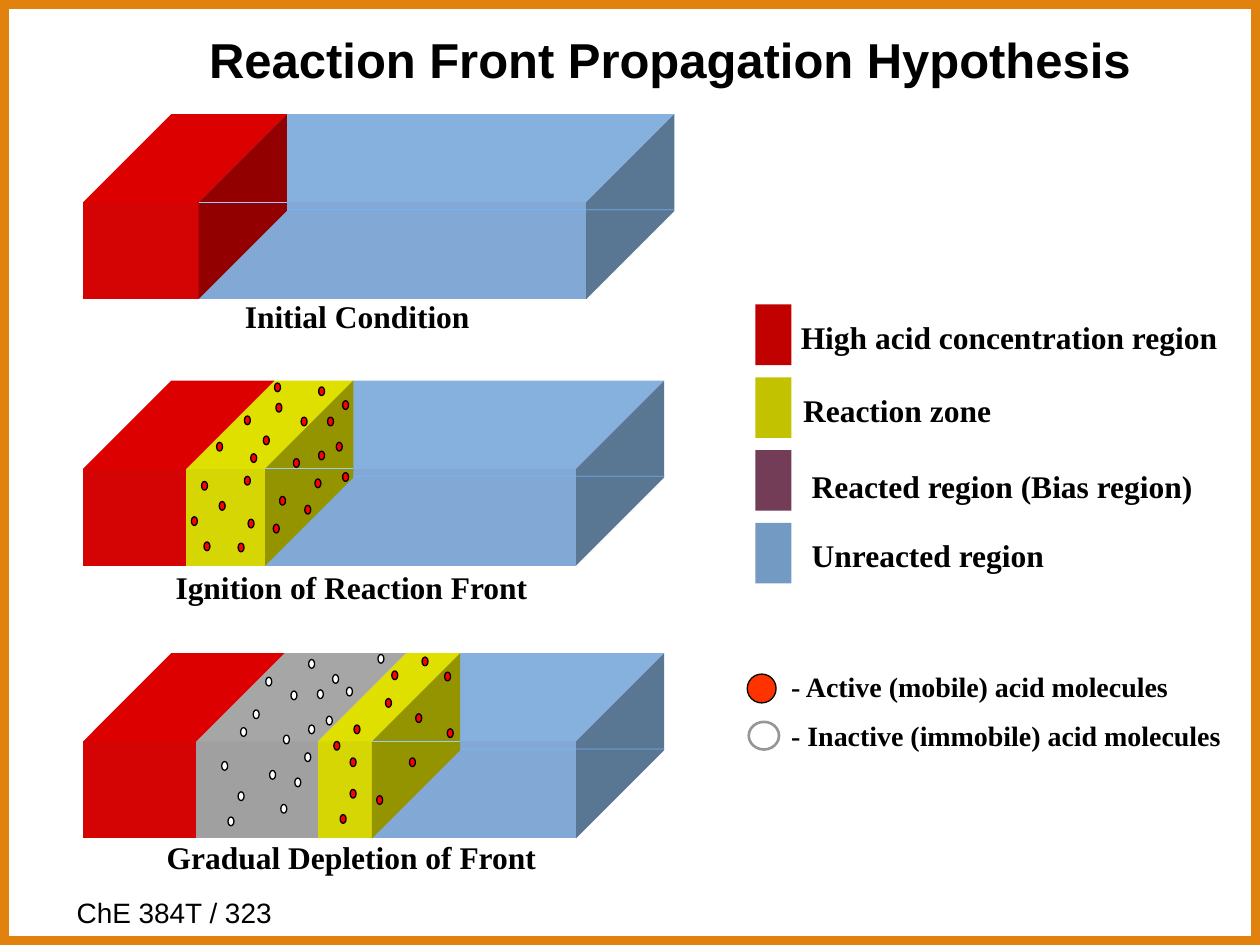
from lxml import etree
from pptx import Presentation
from pptx.dml.color import RGBColor
from pptx.enum import shapes, text
from pptx.oxml.ns import qn
from pptx.util import Pt

BLACK = RGBColor(0, 0, 0)
WHITE = RGBColor(255, 255, 255)
ORANGE = RGBColor(0xE2, 0x82, 0x0E)
RING = RGBColor(0x96, 0x96, 0x96)
ACTIVE = RGBColor(0xFF, 0x33, 0x00)
ACID = RGBColor(0xFF, 0, 0)
FRONT_EDGE = RGBColor(0x99, 0xCC, 0xFF)
BACK_EDGE = RGBColor(0x75, 0xBA, 0xFF)
PURPLE = RGBColor(0x73, 0x3C, 0x57)
# front, top and side face of each region
RED = RGBColor(0xD4, 0x04, 0x04), RGBColor(0xDD, 0, 0), RGBColor(0x92, 0, 0)
YELLOW = RGBColor(0xD6, 0xD6, 0x04), RGBColor(0xDF, 0xDF, 0), RGBColor(0x94, 0x94, 0)
GREY = RGBColor(0xA0, 0xA0, 0xA0), RGBColor(0xA6, 0xA6, 0xA6), RGBColor(0x7F, 0x7F, 0x7F)
BLUE = RGBColor(0x82, 0xA9, 0xD6), RGBColor(0x86, 0xB1, 0xDF), RGBColor(0x59, 0x76, 0x93)

SERIF, SANS = "Times New Roman", "Arial"
DEPTH, HEIGHT = 50.4, 55.4

IGNITION_ACTIVE = [
    (148.3, 11.5), (134.6, 3.6), (92.2, 20.2), (76.3, 35.3), (132.5, 56.2),
    (67.7, 57.6), (124.6, 20.9), (108.7, 82.1), (144.7, 35.3), (61.9, 77.8),
    (148.3, 52.6), (103, 31.7), (134.6, 40.3), (112.3, 66.2), (139.7, 20.9),
    (126.7, 71.3), (95.8, 41.8), (109.4, 1.4), (110.2, 13), (77.8, 69.1),
    (94.3, 79.2), (69.1, 92.2), (92.2, 54.7), (120.2, 44.6), (88.6, 92.9)]
DEPLETION_ACTIVE = [
    (206.6, 10.8), (193.7, 2.2), (172.8, 25.9), (167.8, 81.4), (208.1, 43.2),
    (186.5, 59.8), (154.8, 41), (176.4, 10.1), (152.6, 77.8), (152.6, 59.8),
    (190.1, 34.6), (146.9, 92.2), (143.3, 50.4)]
DEPLETION_INACTIVE = [
    (150.5, 19.4), (168.5, 0.7), (142.6, 12.2), (128.9, 3.6), (126.7, 56.9),
    (118.8, 21.6), (113, 86.4), (139, 36), (97.2, 32.4), (128.9, 41),
    (106.6, 67), (133.9, 20.9), (121, 71.3), (90, 42.5), (104.4, 13.7),
    (88.6, 79.2), (79.2, 61.9), (114.5, 46.8), (82.8, 93.6)]


def paint(shape, fill=None, line=None, weight=0.75):
    shape.shadow.inherit = False
    if fill is None:
        shape.fill.background()
    else:
        shape.fill.solid()
        shape.fill.fore_color.rgb = fill
    if line is None:
        shape.line.fill.background()
    else:
        shape.line.color.rgb = line
        shape.line.width = Pt(weight)


def add_preset(slide, kind, left, top, width, height, **look):
    shape = slide.shapes.add_shape(kind, Pt(left), Pt(top), Pt(width), Pt(height))
    paint(shape, **look)


def add_face(slide, corners, colour):
    points = [(Pt(x), Pt(y)) for x, y in corners]
    outline = slide.shapes.build_freeform(*points[0])
    outline.add_line_segments(points[1:], close=True)
    paint(outline.convert_to_shape(), fill=colour)


def add_edge(slide, x1, x2, y, colour, opacity=None):
    edge = slide.shapes.add_connector(
        shapes.MSO_CONNECTOR.STRAIGHT, Pt(x1), Pt(y), Pt(x2), Pt(y))
    edge.line.color.rgb = colour
    edge.line.width = Pt(0.75)
    properties = edge._element.spPr
    if opacity is not None:
        rgb = properties.find(".//" + qn("a:srgbClr"))
        etree.SubElement(rgb, qn("a:alpha"), val=str(opacity * 1000))
    etree.SubElement(properties, qn("a:effectLst"))


def write(shape, words, size, font=SERIF, bold=True, align=text.PP_ALIGN.LEFT,
          anchor=text.MSO_ANCHOR.TOP, wrap=False):
    frame = shape.text_frame
    frame.text = words
    frame.word_wrap = wrap
    frame.vertical_anchor = anchor
    paragraph = frame.paragraphs[0]
    paragraph.alignment = align
    style = {"name": font, "size": Pt(size), "bold": bold}
    for key, value in style.items():
        setattr(paragraph.font, key, value)
    paragraph.font.color.rgb = BLACK


def add_label(slide, left, top, width, height, words, size, **style):
    label = slide.shapes.add_textbox(Pt(left), Pt(top), Pt(width), Pt(height))
    write(label, words, size, **style)


def add_frame(slide, width, height):
    """Page border, title and course number."""
    add_label(slide, 36.7, 508.3, 206, 26.6, "ChE 384T / 323", 16,
              font=SANS, bold=False, wrap=True)
    add_preset(slide, shapes.MSO_SHAPE.RECTANGLE, 0, 0, width, height,
               line=ORANGE, weight=10)
    title = slide.shapes.title
    place = {"left": 112.3, "top": 13, "width": 542.9, "height": 41}
    for key, value in place.items():
        setattr(title, key, Pt(value))
    write(title, "Reaction Front Propagation Hypothesis", 28, font=SANS)


def add_bar(slide, left, top, regions, caption, caption_box, active=(), inactive=()):
    """Block in oblique view; regions run left to right as (width, faces)."""
    front = top + DEPTH
    bottom = front + HEIGHT
    right = left + sum(width for width, _ in regions)
    start = right
    for index, (width, (face, lid, side)) in reversed(list(enumerate(regions))):
        end, start = start, start - width
        add_face(slide, [(start, front), (end, front), (end, bottom), (start, bottom)], face)
        add_face(slide, [(start, front), (start + DEPTH, top),
                         (end + DEPTH, top), (end, front)], lid)
        if index >= len(regions) - 2:
            add_face(slide, [(end, front), (end + DEPTH, top),
                             (end + DEPTH, bottom - DEPTH), (end, bottom)], side)
    clear = right - regions[-1][0]
    add_edge(slide, clear, clear + DEPTH, front, FRONT_EDGE)
    add_edge(slide, clear + DEPTH, right + DEPTH, front + 4.3, BACK_EDGE, opacity=50)
    for spots, colour in ((active, ACID), (inactive, WHITE)):
        for x, y in spots:
            add_preset(slide, shapes.MSO_SHAPE.OVAL, left + x, top + y, 3.4, 5,
                       fill=colour, line=BLACK)
    x, y, width = caption_box
    add_label(slide, left + x, top + y, width, 28.8, caption, 18,
              align=text.PP_ALIGN.CENTER)


def add_region_key(slide, left, top):
    rows = [  # colour, label, its offset from the swatch column, width
        (RGBColor(0xC1, 0, 0), "High acid concentration region", 18.7, 4.3, 252.7),
        (RGBColor(0xC2, 0xC2, 0), "Reaction zone", 20.2, 4.3, 121.7),
        (PURPLE, "Reacted region (Bias region)", 24.5, 6.3, 233.3),
        (RGBColor(0x73, 0x9A, 0xC2), "Unreacted region", 18.7, 4, 159.8)]
    for row, (colour, words, x, y, width) in enumerate(rows):
        row_top = top + row * 41.6
        add_preset(slide, shapes.MSO_SHAPE.RECTANGLE, left, row_top, 20.6, 34.6, fill=colour)
        add_label(slide, left + x, row_top + y, width, 28.8, words, 18,
                  align=text.PP_ALIGN.CENTER)


def add_molecule_key(slide, left, top):
    rows = [
        ((0, 6.5, 16.5, 16.5), dict(fill=ACTIVE, line=BLACK),
         "- Active (mobile) acid molecules", 231.8),
        ((0.9, 33.8, 17.3, 15.8), dict(line=RING, weight=1.5),
         "- Inactive (immobile) acid molecules", 261.4)]
    for row, ((x, y, width, height), look, words, label_width) in enumerate(rows):
        add_preset(slide, shapes.MSO_SHAPE.OVAL, left + x, top + y, width, height, **look)
        add_label(slide, left + 18, top + row * 28, label_width, 26.6, words, 16,
                  anchor=text.MSO_ANCHOR.MIDDLE)


def main():
    deck = Presentation()
    deck.slide_width, deck.slide_height = Pt(720), Pt(540)
    slide = deck.slides.add_slide(deck.slide_layouts[5])
    add_frame(slide, 720, 540)
    add_molecule_key(slide, 427, 378.7)
    add_region_key(slide, 431.6, 174)
    add_bar(slide, 47.5, 65.2, [(66, RED), (221.5, BLUE)],
            "Initial Condition", (85, 101.1, 143.3))
    add_bar(slide, 47.5, 217.5, [(59, RED), (45, YELLOW), (177.7, BLUE)],
            "Ignition of Reaction Front", (45.4, 103.6, 216), active=IGNITION_ACTIVE)
    add_bar(slide, 47.5, 373.3,
            [(64.7, RED), (69.4, GREY), (31, YELLOW), (116.6, BLUE)],
            "Gradual Depletion of Front", (40.3, 101.9, 226.1),
            active=DEPLETION_ACTIVE, inactive=DEPLETION_INACTIVE)
    deck.save("out.pptx")


if __name__ == "__main__":
    main()
